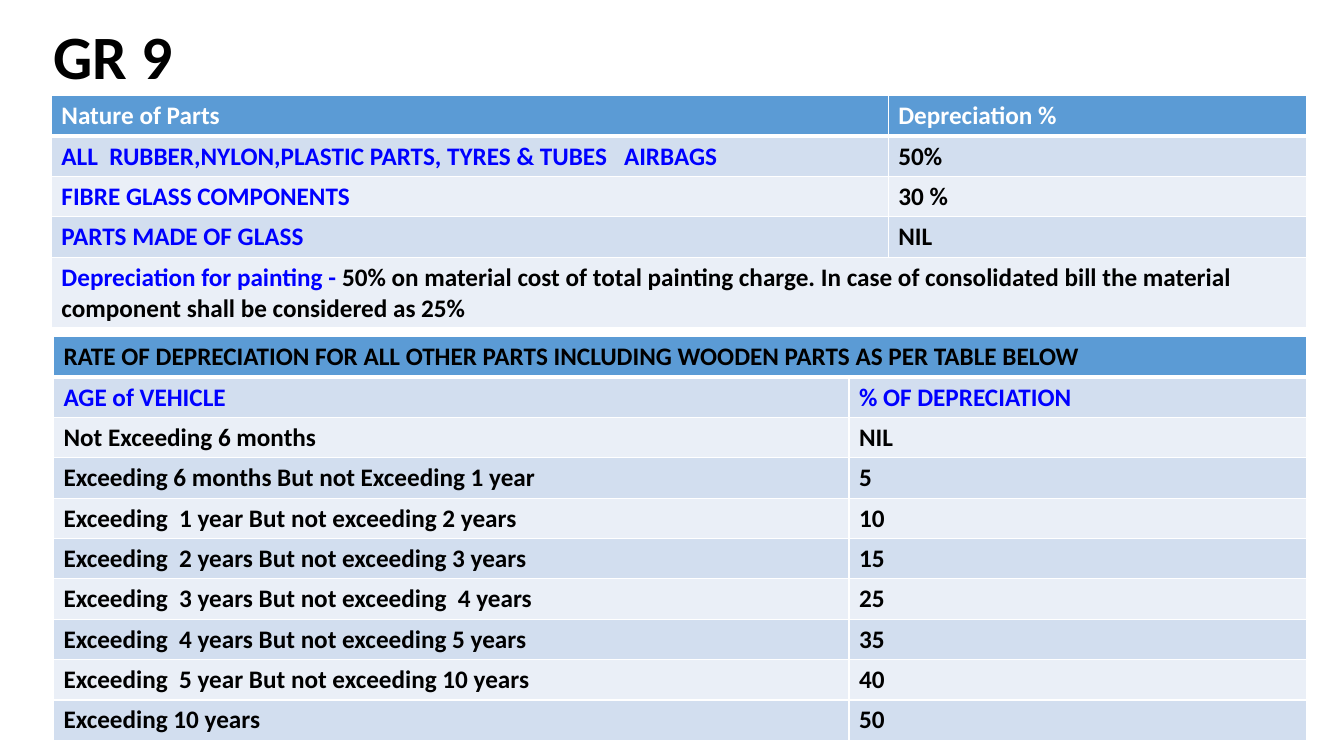
from lxml import etree
from pptx import Presentation
from pptx.dml.color import RGBColor
from pptx.enum.text import MSO_ANCHOR
from pptx.oxml.ns import qn
from pptx.util import Inches, Pt

MIDDLE = MSO_ANCHOR.MIDDLE
BLACK = RGBColor(0x00, 0x00, 0x00)
WHITE = RGBColor(0xFF, 0xFF, 0xFF)
BLUE = RGBColor(0x00, 0x00, 0xFF)
HEAD = RGBColor(0x5B, 0x9B, 0xD5)
BANDS = [RGBColor(0xEA, 0xEF, 0xF7), RGBColor(0xD2, 0xDE, 0xEF)]
FONT = "Calibri"
ROW = 0.4


def add_run(para, text, color, size=18):
    run = para.add_run()
    run.text = text
    font = run.font
    font.name, font.size, font.bold = FONT, Pt(size), True
    font.color.rgb = color


def add_grid(left, top, widths, heights, rows):
    """Draw a banded table; a row with one cell spans all columns."""
    frame = slide.shapes.add_table(
        len(rows), len(widths), Inches(left), Inches(top),
        Inches(sum(widths)), Inches(sum(heights)))
    table = frame.table
    for col, width in zip(table.columns, widths):
        col.width = Inches(width)
    for r, cells in enumerate(rows):
        table.rows[r].height = Inches(heights[r])
        if len(cells) == 1:
            table.cell(r, 0).merge(table.cell(r, len(widths) - 1))
        for c in range(len(widths)):
            cell = table.cell(r, c)
            props = cell._tc.get_or_add_tcPr()
            for side in "LRTB":
                thick = (r, side) in [(0, "B"), (1, "T")]
                line = etree.SubElement(props, qn("a:ln" + side),
                                        w=str(Pt(3 if thick else 1)))
                fill = etree.SubElement(line, qn("a:solidFill"))
                etree.SubElement(fill, qn("a:srgbClr"), val=str(WHITE))
            cell.fill.solid()
            cell.fill.fore_color.rgb = BANDS[r % 2] if r else HEAD
            if c < len(cells):
                for text, color in cells[c]:
                    add_run(cell.text_frame.paragraphs[0], text, color)


deck = Presentation()
deck.slide_width, deck.slide_height = Inches(13.33), Inches(7.5)
slide = deck.slides.add_slide(deck.slide_layouts[6])

# Title
box = slide.shapes.add_textbox(
    Inches(0.43), Inches(-0.13), Inches(11.5), Inches(1.45))
title = box.text_frame
title.word_wrap = True
title.vertical_anchor = MIDDLE
title.paragraphs[0].line_spacing = 0.9
add_run(title.paragraphs[0], "GR 9", BLACK, 44)

# Depreciation by kind of part
parts = [
    ("ALL  RUBBER,NYLON,PLASTIC PARTS, TYRES & TUBES   AIRBAGS", "50%"),
    ("FIBRE GLASS COMPONENTS", "30 %"),
    ("PARTS MADE OF GLASS", "NIL"),
]
rows = [[[("Nature of Parts", WHITE)], [("Depreciation %", WHITE)]]]
rows += [[[(part, BLUE)], [(rate, BLACK)]] for part, rate in parts]
rows.append([[
    ("Depreciation for painting - ", BLUE),
    ("50% on material cost of total painting charge. In case of consolidated "
     "bill the material component shall be considered as 25%", BLACK),
]])
add_grid(0.51, 0.95, [8.3, 4.15], [ROW] * 4 + [0.68], rows)

# Depreciation by age of vehicle
ages = [
    ("Not Exceeding 6 months", "NIL"),
    ("Exceeding 6 months But not Exceeding 1 year", "5"),
    ("Exceeding  1 year But not exceeding 2 years", "10"),
    ("Exceeding  2 years But not exceeding 3 years", "15"),
    ("Exceeding  3 years But not exceeding  4 years", "25"),
    ("Exceeding  4 years But not exceeding 5 years", "35"),
    ("Exceeding  5 year But not exceeding 10 years", "40"),
    ("Exceeding 10 years", "50"),
]
rows = [
    [[("RATE OF DEPRECIATION FOR ALL OTHER PARTS INCLUDING WOODEN PARTS "
       "AS PER TABLE BELOW", BLACK)]],
    [[("AGE of VEHICLE", BLUE)], [("% OF DEPRECIATION", BLUE)]],
]
rows += [[[(age, BLACK)], [(rate, BLACK)]] for age, rate in ages]
add_grid(0.53, 3.34, [7.89, 4.54], [ROW] * len(rows), rows)

deck.save("out.pptx")
